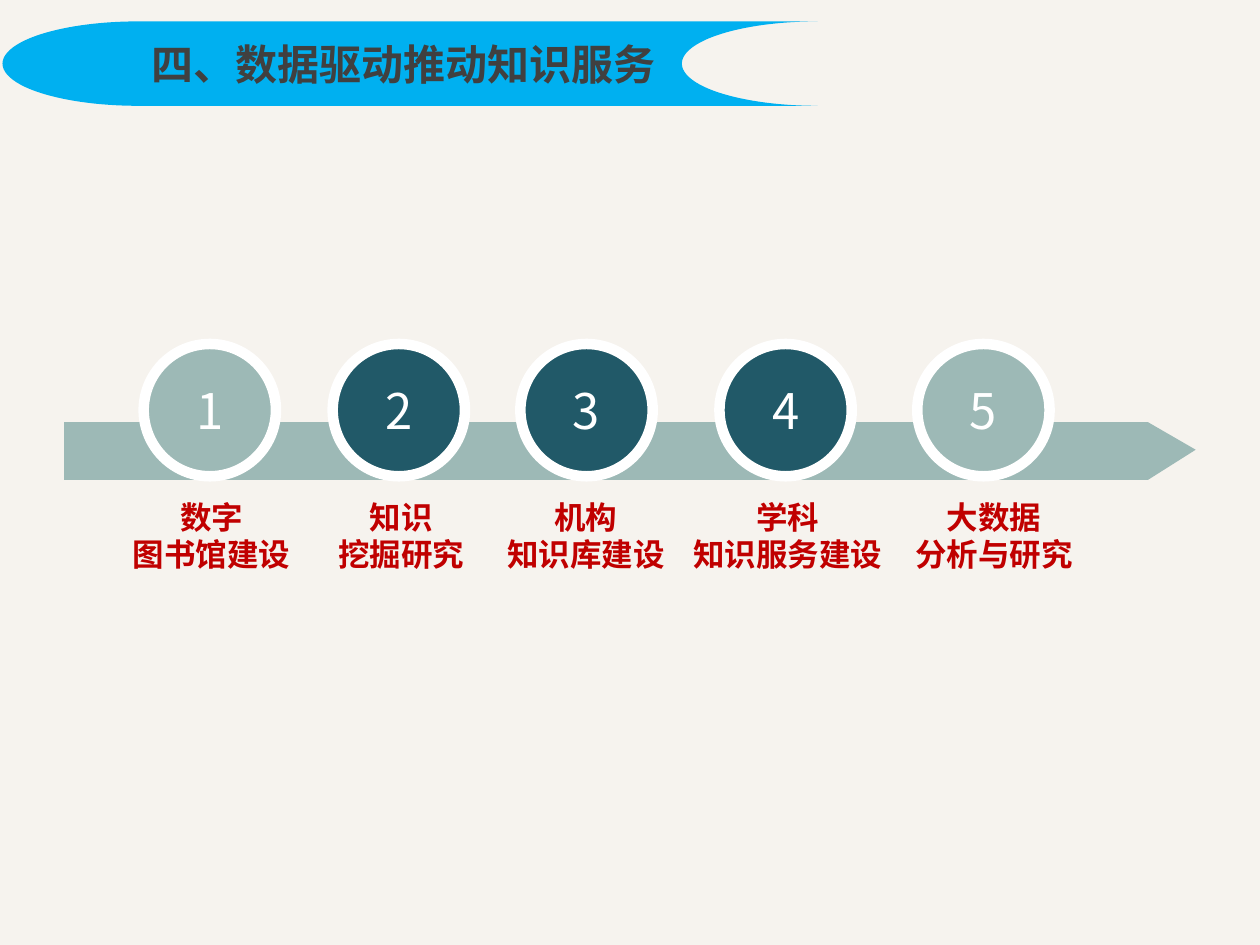
from pptx import Presentation
from pptx.dml.color import RGBColor
from pptx.enum.shapes import MSO_SHAPE as SHAPE
from pptx.enum.text import MSO_ANCHOR as ANCHOR, PP_ALIGN as ALIGN
from pptx.oxml.ns import qn
from pptx.util import Inches, Pt
from lxml import etree

FONT = "Noto Sans CJK SC"
COLORS = {"back": "F6F3EE", "band": "00B0F0", "title": "404040", "sage": "9DB9B6",
          "teal": "215968", "white": "FFFFFF", "label": "C00000"}


def paint(shape, color):
    shape.shadow.inherit = False
    shape.fill.solid()
    shape.fill.fore_color.rgb = RGBColor.from_string(COLORS[color])
    shape.line.fill.background()


def write(shape, text, size, color, bold=False, align=ALIGN.CENTER, anchor=ANCHOR.MIDDLE):
    tf = shape.text_frame
    tf.text = text
    tf.vertical_anchor = anchor
    tf.word_wrap = False
    for p in tf.paragraphs:
        p.alignment = align
        for r in p.runs:
            r.font.name = FONT
            r.font.size = Pt(size)
            r.font.bold = bold
            r.font.color.rgb = RGBColor.from_string(COLORS[color])
            ea = etree.SubElement(r.font._element, qn("a:ea"))
            ea.set("typeface", FONT)


prs = Presentation()
prs.slide_width, prs.slide_height = Inches(10), Inches(7.5)
s = prs.slides.add_slide(prs.slide_layouts[5])
s.background.fill.solid()
s.background.fill.fore_color.rgb = RGBColor.from_string(COLORS["back"])

# Title band, moved behind the title
band = s.shapes.add_shape(SHAPE.FLOWCHART_STORED_DATA, Inches(0.02), Inches(0.17),
                          Inches(6.47), Inches(0.67))
paint(band, "band")
title = s.shapes.title
title._element.addprevious(band._element)
title.left, title.top = Inches(1.1), Inches(0.17)
title.width, title.height = Inches(4.31), Inches(0.67)
write(title, "四、数据驱动推动知识服务", 24, "title", bold=True, align=ALIGN.LEFT)

# Timeline arrow
outline = [(0.51, 3.35), (9.11, 3.35), (9.49, 3.57), (9.11, 3.81), (0.51, 3.81)]
points = [(Inches(x), Inches(y)) for x, y in outline]
fb = s.shapes.build_freeform(*points[0])
fb.add_line_segments(points[1:], close=True)
paint(fb.convert_to_shape(), "sage")

# Numbered steps: circle left, label left, label width, colour, text
steps = [
    (1.14, 0.95, 1.46, "sage", "数字\n图书馆建设"),
    (2.64, 2.58, 1.21, "teal", "知识\n挖掘研究"),
    (4.13, 3.92, 1.46, "teal", "机构\n知识库建设"),
    (5.71, 5.39, 1.72, "teal", "学科\n知识服务建设"),
    (7.28, 7.16, 1.46, "sage", "大数据\n分析与研究"),
]
for number, (x, label_x, label_w, color, text) in enumerate(steps, 1):
    circle = s.shapes.add_shape(SHAPE.OVAL, Inches(x), Inches(2.73),
                                Inches(1.05), Inches(1.05))
    paint(circle, color)
    circle.line.color.rgb = RGBColor.from_string(COLORS["white"])
    circle.line.width = Pt(6)
    write(circle, str(number), 28, "white")

    label = s.shapes.add_textbox(Inches(label_x), Inches(3.9), Inches(label_w), Inches(0.71))
    write(label, text, 18, "label", bold=True, anchor=ANCHOR.TOP)

prs.save("out.pptx")
